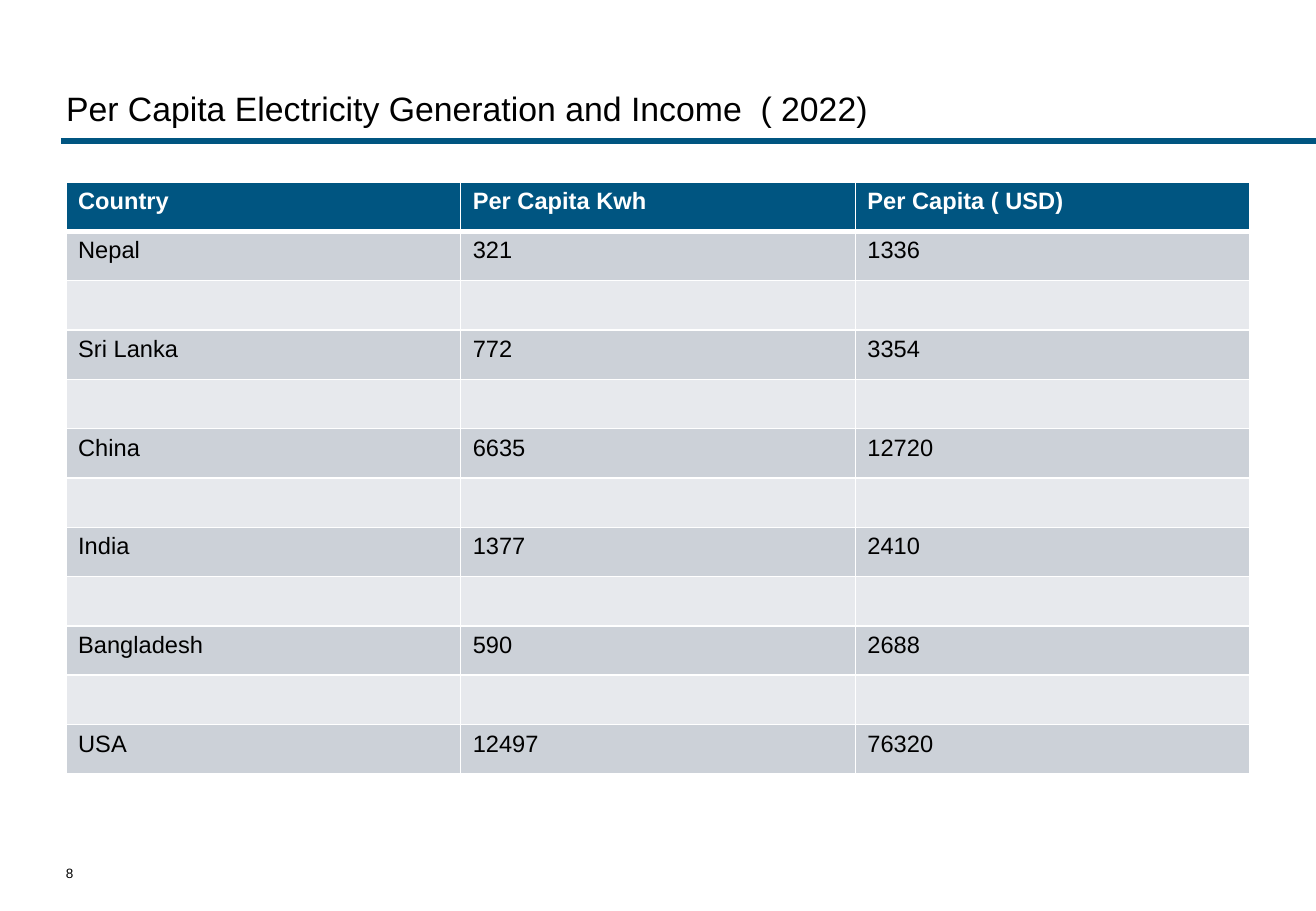
from lxml import etree
from pptx import Presentation
from pptx.dml.color import RGBColor
from pptx.enum.shapes import MSO_CONNECTOR
from pptx.enum.text import MSO_ANCHOR, MSO_AUTO_SIZE, PP_ALIGN
from pptx.oxml import parse_xml
from pptx.oxml.ns import nsdecls, qn
from pptx.util import Pt

TITLE = "Per Capita Electricity Generation and Income  ( 2022)"
PAGE_NUMBER = "8"
HEADER = ("Country", "Per Capita Kwh", "Per Capita ( USD)")
COUNTRIES = [
    ("Nepal", "321", "1336"),
    ("Sri Lanka", "772", "3354"),
    ("China", "6635", "12720"),
    ("India", "1377", "2410"),
    ("Bangladesh", "590", "2688"),
    ("USA", "12497", "76320"),
]

FONT = "Arial"
BLUE = RGBColor(0x00, 0x55, 0x81)
DARK_BAND = RGBColor(0xCC, 0xD1, 0xD8)
LIGHT_BAND = RGBColor(0xE7, 0xE9, 0xED)
WHITE = RGBColor(0xFF, 0xFF, 0xFF)
BLACK = RGBColor(0x00, 0x00, 0x00)

SCALE = 7526  # EMU in one px
PAGE_WIDTH, PAGE_HEIGHT = 1316, 911
MARGIN, CONTENT_WIDTH = 66, 1184
RULE_LEFT, RULE_Y = 61, 141
TABLE_TOP, TABLE_HEIGHT = 182, 592


def px(*lengths):
    return [length * SCALE for length in lengths]


def format_runs(frame, size, color, bold=False):
    for para in frame.paragraphs:
        for span in para.runs:
            span.font.name = FONT
            span.font.size = Pt(size)
            span.font.bold = bold
            span.font.color.rgb = color


def set_label(box, text, bounds, size):
    """Place a label without insets, resting on the bottom of its box."""
    box.left, box.top, box.width, box.height = px(*bounds)
    frame = box.text_frame
    frame.text = text
    frame.word_wrap = True
    frame.auto_size = MSO_AUTO_SIZE.NONE
    frame.vertical_anchor = MSO_ANCHOR.BOTTOM
    frame.margin_left = frame.margin_top = 0
    frame.margin_right = frame.margin_bottom = 0
    frame.paragraphs[0].alignment = PP_ALIGN.LEFT
    format_runs(frame, size, BLACK)


def set_borders(cell, top, bottom):
    """Draw white borders; top and bottom are widths in points."""
    properties = cell._tc.get_or_add_tcPr()
    for side, width in (("L", 1), ("R", 1), ("T", top), ("B", bottom)):
        properties.append(parse_xml(
            f'<a:ln{side} {nsdecls("a")} w="{Pt(width)}"><a:solidFill>'
            f'<a:srgbClr val="{WHITE}"/></a:solidFill></a:ln{side}>'))


def add_rule(page):
    x1, y, x2 = px(RULE_LEFT, RULE_Y, PAGE_WIDTH)
    rule = page.shapes.add_connector(MSO_CONNECTOR.STRAIGHT, x1, y, x2, y)
    rule.line.color.rgb = BLUE
    rule.line.width = Pt(3)
    etree.SubElement(rule._element.spPr, qn("a:effectLst"))


def add_country_table(page):
    rows = [HEADER]
    for country in COUNTRIES:
        rows += [country, ("",) * len(HEADER)]
    rows.pop()  # no spacer after the last country
    bounds = px(MARGIN, TABLE_TOP, CONTENT_WIDTH, TABLE_HEIGHT)
    table = page.shapes.add_table(len(rows), len(HEADER), *bounds).table
    for row, values in enumerate(rows):
        is_header = row == 0
        band = DARK_BAND if row % 2 else LIGHT_BAND
        for column, value in enumerate(values):
            cell = table.cell(row, column)
            set_borders(cell, 3 if row == 1 else 1, 3 if is_header else 1)
            cell.fill.solid()
            cell.fill.fore_color.rgb = BLUE if is_header else band
            if value:
                cell.text_frame.text = value
                format_runs(cell.text_frame, 14,
                            WHITE if is_header else BLACK, is_header)


def main():
    deck = Presentation()
    deck.slide_width, deck.slide_height = px(PAGE_WIDTH, PAGE_HEIGHT)
    page = deck.slides.add_slide(deck.slide_layouts[5])
    add_rule(page)
    set_label(page.shapes.title, TITLE, (MARGIN, 74, CONTENT_WIDTH, 54), 20)
    add_country_table(page)
    number_box = page.shapes.add_textbox(0, 0, 0, 0)
    set_label(number_box, PAGE_NUMBER, (MARGIN, 852, 40, 29), 8)
    deck.save("out.pptx")


if __name__ == "__main__":
    main()
